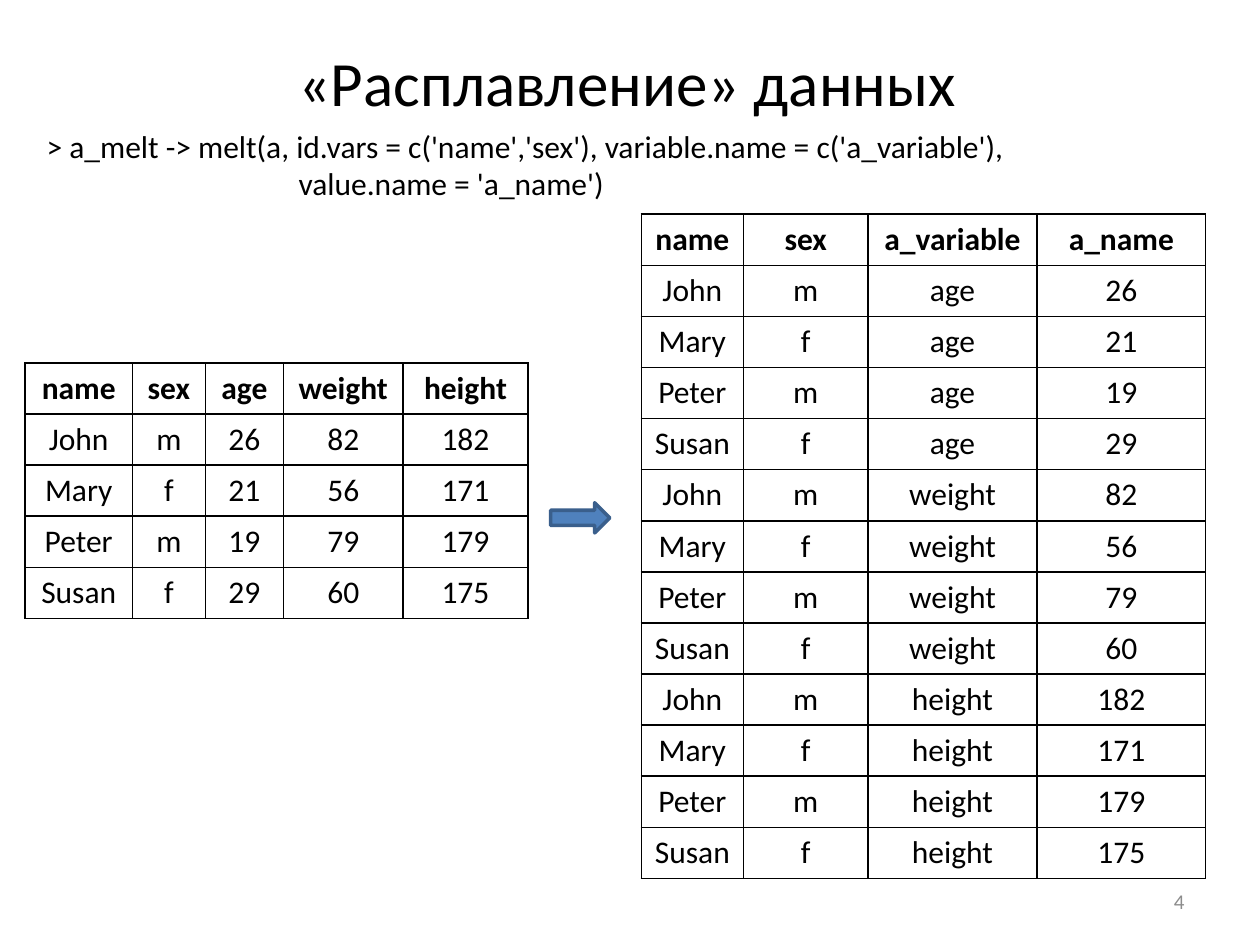
"""Build a slide that shows how melt turns a wide table into a long one."""
from dataclasses import dataclass

from lxml import etree
from pptx import Presentation
from pptx.dml.color import RGBColor
from pptx.enum import shapes, text
from pptx.oxml import ns
from pptx.util import Inches, Pt


@dataclass(frozen=True)
class Theme:
    font: str = "Calibri"
    ink: str = "000000"
    paper: str = "FFFFFF"
    muted: str = "8C8C8C"
    arrow_fill: str = "4F81BD"
    arrow_line: str = "3A5F8C"
    title_size: int = 36
    body_size: int = 18
    number_size: int = 12


theme = Theme()


def write(paragraph, wording, size=theme.body_size, color=theme.ink,
          bold=False, align=text.PP_ALIGN.LEFT):
    """Put formatted wording into a paragraph."""
    paragraph.alignment = align
    run = paragraph.add_run()
    run.text = wording
    run.font.name = theme.font
    run.font.size = Pt(size)
    run.font.bold = bold
    run.font.color.rgb = RGBColor.from_string(color)


def draw_table(slide, records, left, top, widths, row_height):
    """Draw records as a bordered grid with a bold first row."""
    grid = slide.shapes.add_table(
        len(records), len(widths), Inches(left), Inches(top),
        Inches(sum(widths)), Inches(row_height * len(records))).table
    grid.first_row = grid.horz_banding = False
    for column, width in zip(grid.columns, widths):
        column.width = Inches(width)
    for r, record in enumerate(records):
        grid.rows[r].height = Inches(row_height)
        for c, value in enumerate(record):
            cell = grid.cell(r, c)
            write(cell.text_frame.paragraphs[0], str(value), bold=r == 0,
                  align=text.PP_ALIGN.CENTER)
            properties = cell._tc.get_or_add_tcPr()
            for side in ("lnL", "lnR", "lnT", "lnB"):
                border = etree.SubElement(properties, ns.qn(f"a:{side}"), w=str(Pt(1)))
                solid = etree.SubElement(border, ns.qn("a:solidFill"))
                etree.SubElement(solid, ns.qn("a:srgbClr"), val=theme.ink)
            cell.fill.background()


deck = Presentation()
deck.slide_width, deck.slide_height = Inches(10), Inches(7.5)
slide = deck.slides.add_slide(deck.slide_layouts[5])

title = slide.shapes.title
title.left, title.top = Inches(-0.02), Inches(0.29)
title.width, title.height = Inches(10), Inches(0.71)
write(title.text_frame.paragraphs[0], "«Расплавление» данных",
      size=theme.title_size, align=text.PP_ALIGN.CENTER)

command = slide.shapes.add_shape(shapes.MSO_SHAPE.RECTANGLE, Inches(0.37),
                                 Inches(1), Inches(9.36), Inches(0.61))
command.shadow.inherit = False
command.fill.solid()
command.fill.fore_color.rgb = RGBColor.from_string(theme.paper)
command.line.fill.background()
command_text = command.text_frame
command_text.word_wrap = True
command_text.vertical_anchor = text.MSO_ANCHOR.MIDDLE
command_text.margin_left = command_text.margin_right = 0
command_text.margin_top = command_text.margin_bottom = 0
write(command_text.paragraphs[0],
      "> a_melt -> melt(a, id.vars = c('name','sex'), variable.name = c('a_variable'),")
continuation = command_text.add_paragraph()
continuation._p.get_or_add_pPr().set("marL", str(Inches(2)))
write(continuation, "value.name = 'a_name')")

wide = [
    ("name", "sex", "age", "weight", "height"),
    ("John", "m", 26, 82, 182),
    ("Mary", "f", 21, 56, 171),
    ("Peter", "m", 19, 79, 179),
    ("Susan", "f", 29, 60, 175),
]
header, *people = wide
melted = [("name", "sex", "a_variable", "a_name")]
for position, variable in enumerate(header[2:], start=2):
    melted += [(*person[:2], variable, person[position]) for person in people]

draw_table(slide, wide, 0.2, 2.88, (0.85, 0.58, 0.62, 0.95, 0.99), 0.4)
draw_table(slide, melted, 5.09, 1.7, (0.81, 0.99, 1.34, 1.34), 5.27 / len(melted))

arrow = slide.shapes.add_shape(shapes.MSO_SHAPE.RIGHT_ARROW, Inches(4.37),
                               Inches(3.99), Inches(0.47), Inches(0.24))
arrow.shadow.inherit = False
arrow.fill.solid()
arrow.fill.fore_color.rgb = RGBColor.from_string(theme.arrow_fill)
arrow.line.color.rgb = RGBColor.from_string(theme.arrow_line)
arrow.line.width = Pt(2)

page_number = slide.shapes.add_textbox(Inches(7.17), Inches(6.95),
                                       Inches(2.33), Inches(0.4))
page_number.text_frame.word_wrap = True
page_number.text_frame.vertical_anchor = text.MSO_ANCHOR.MIDDLE
write(page_number.text_frame.paragraphs[0], "4", size=theme.number_size,
      color=theme.muted, align=text.PP_ALIGN.RIGHT)

deck.save("out.pptx")
